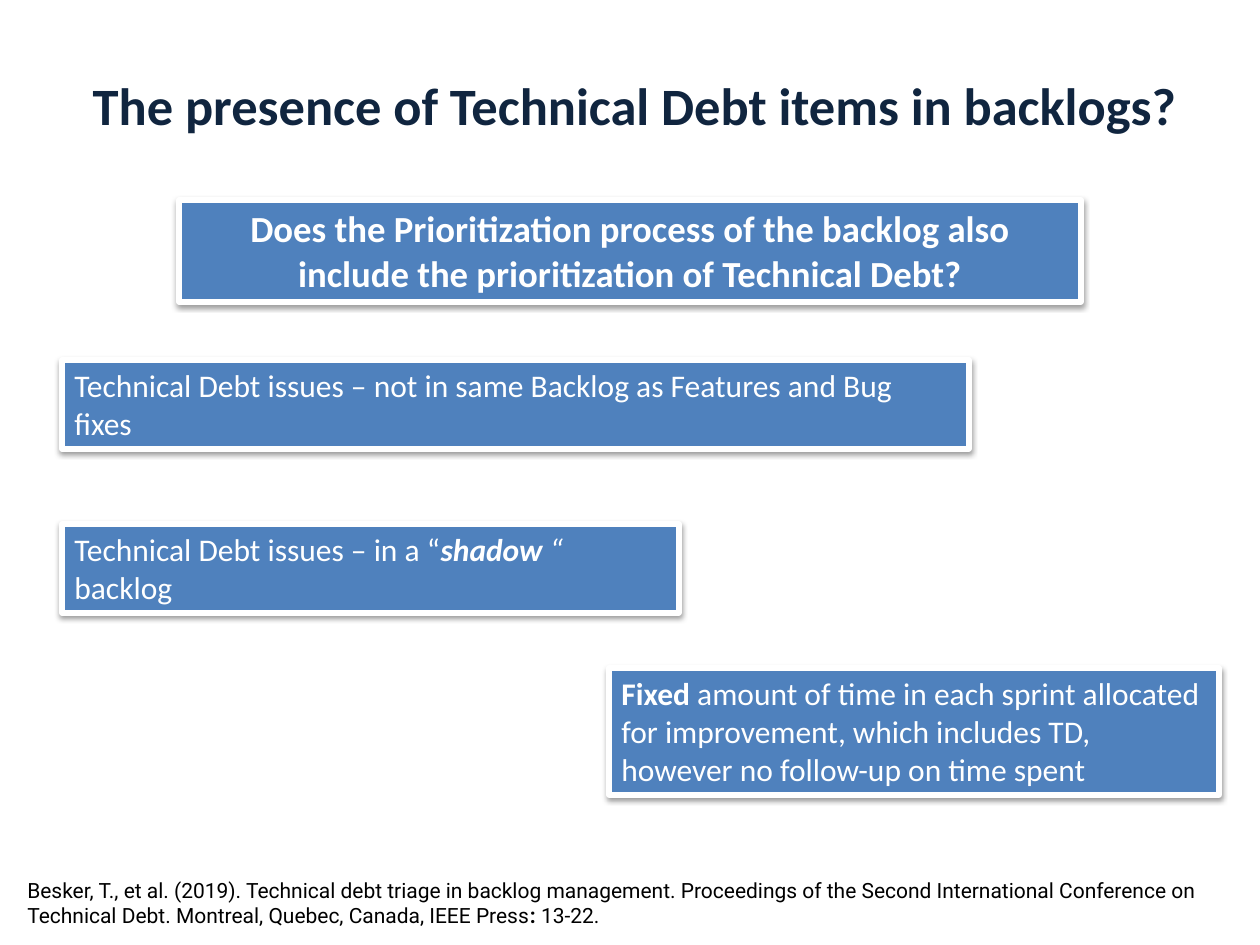
from lxml.etree import SubElement
from pptx import Presentation
from pptx.dml.color import RGBColor
from pptx.enum.shapes import MSO_SHAPE
from pptx.enum.text import MSO_ANCHOR, PP_ALIGN
from pptx.oxml.ns import qn
from pptx.util import Emu, Pt


def px(*nums):
    return [Emu(round(n * 914400 / 126)) for n in nums]


def write(shape, runs, size, color, font="Calibri", align=PP_ALIGN.LEFT, bold=None):
    frame = shape.text_frame
    frame.word_wrap = True
    frame.vertical_anchor = MSO_ANCHOR.TOP
    para = frame.paragraphs[0]
    para.alignment = align
    para.font.name, para.font.size, para.font.bold = font, Pt(size), bold
    para.font.color.rgb = RGBColor.from_string(color)
    for text, style in runs:
        run = para.add_run()
        run.text = text
        if "b" in style:
            run.font.bold = True
        if "i" in style:
            run.font.italic = True


deck = Presentation()
deck.slide_width, deck.slide_height = px(1260, 945)
slide = deck.slides.add_slide(deck.slide_layouts[6])
shapes = slide.shapes

# Title
title = shapes.add_textbox(*px(35, 66, 1200, 77))
write(title, [("The presence of Technical Debt items in backlogs?", "")],
      30, "10253F", align=PP_ALIGN.CENTER, bold=True)
title.text_frame.vertical_anchor = MSO_ANCHOR.MIDDLE

# Blue boxes: place, text size, alignment, runs
boxes = [
    ((179, 200, 902, 102), 21, PP_ALIGN.CENTER,
     [("Does the Prioritization process of the backlog also include "
       "the prioritization of Technical Debt?", "b")]),
    ((609, 668, 610, 127), 18, PP_ALIGN.LEFT,
     [("Fixed ", "b"),
      ("amount of time in each sprint allocated for improvement, which "
       "includes TD, however no follow-up on time spent", "")]),
    ((62, 360, 907, 89), 18, PP_ALIGN.LEFT,
     [("Technical Debt issues – not in same Backlog as Features and Bug fixes", "")]),
    ((62, 524, 617, 89), 18, PP_ALIGN.LEFT,
     [("Technical Debt issues – in a “", ""), ("shadow", "bi"),
      (" “ ", "i"), ("backlog", "")]),
]
for place, size, align, runs in boxes:
    box = shapes.add_shape(MSO_SHAPE.RECTANGLE, *px(*place))
    box.fill.solid()
    box.fill.fore_color.rgb = RGBColor.from_string("4F81BD")
    box.line.color.rgb = RGBColor.from_string("FFFFFF")
    box.line.width = Pt(3)
    write(box, runs, size, "FFFFFF", align=align)

    # Soft shadow straight below
    box.shadow.inherit = False
    glow = SubElement(box.element.spPr.find(qn("a:effectLst")), qn("a:outerShdw"),
                      blurRad="40000", dist="20000", dir="5400000", rotWithShape="0")
    tint = SubElement(glow, qn("a:srgbClr"), val="000000")
    SubElement(tint, qn("a:alpha"), val="38000")

# Citation
cite = shapes.add_textbox(*px(15, 871, 1223, 63))
write(cite, [("Besker, T., et al. (2019). Technical debt triage in backlog management. "
              "Proceedings of the Second International Conference on Technical Debt. "
              "Montreal, Quebec, Canada, IEEE Press", ""), (": ", "b"), ("13-22.", "")],
      12, "000000", font="Roboto")

deck.save("out.pptx")
